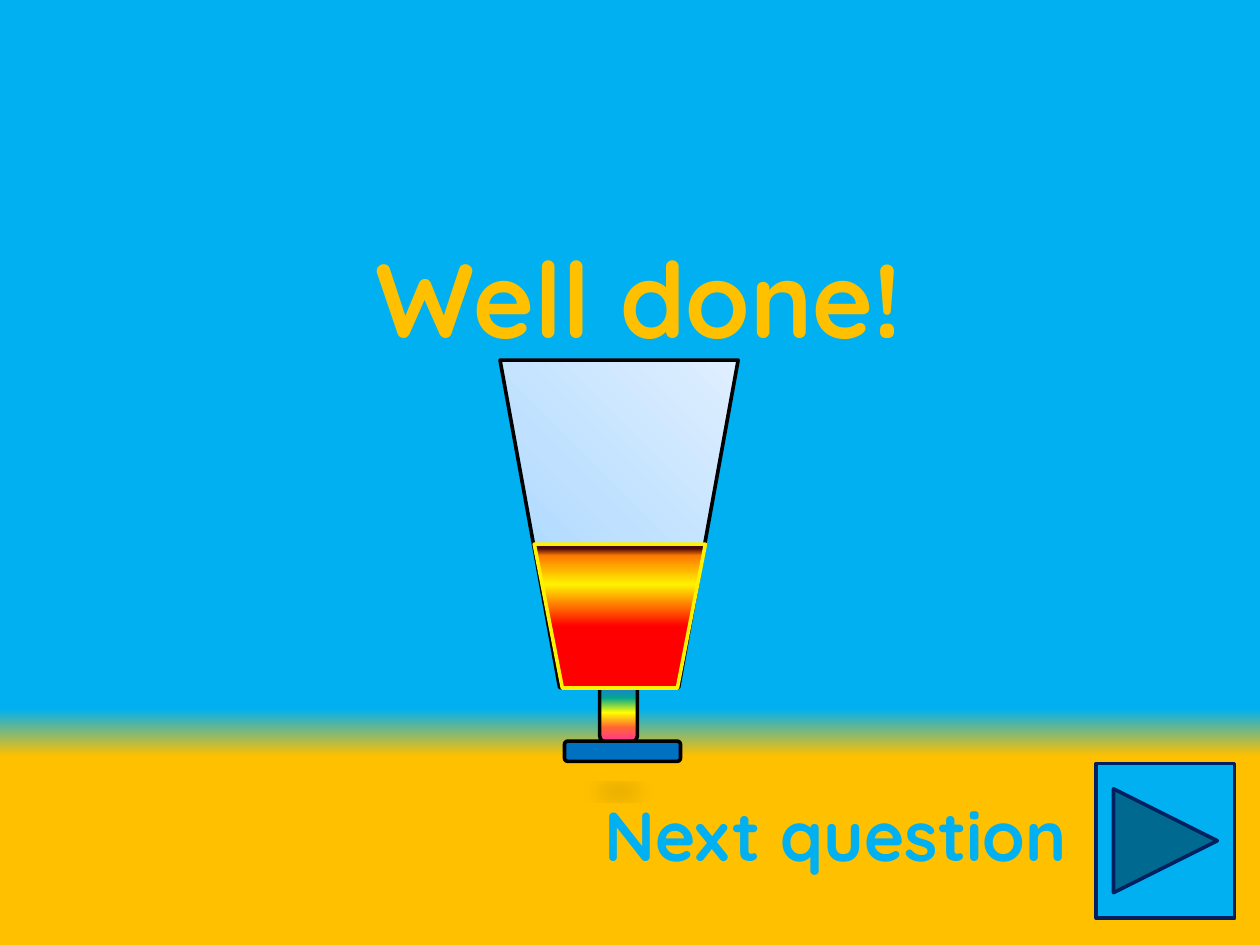
from lxml import etree
from pptx import Presentation
from pptx.dml.color import RGBColor
from pptx.enum.shapes import MSO_SHAPE
from pptx.enum.text import MSO_ANCHOR, PP_ALIGN
from pptx.oxml import parse_xml
from pptx.oxml.ns import nsdecls, qn
from pptx.util import Cm, Pt

ROUNDED = MSO_SHAPE.ROUNDED_RECTANGLE
TRAPEZOID = MSO_SHAPE.TRAPEZOID
NEXT_BUTTON = MSO_SHAPE.ACTION_BUTTON_FORWARD_OR_NEXT
MIDDLE = MSO_ANCHOR.MIDDLE
LEFT, CENTER = PP_ALIGN.LEFT, PP_ALIGN.CENTER

COLORS = {"sky": "00B0F0", "sand": "FFC000", "outline": "000000",
          "base": "0070C0", "navy": "002060", "rim": "FFF200"}
SKY_TO_SAND = [(75, COLORS["sky"]), (80, COLORS["sand"])]
RAINBOW = [(0, "FF3399"), (25, "FF6633"), (50, "FFFF00"),
           (75, "01A78F"), (100, "3366FF")]
GLASS = [(0, "96D0FF"), (50, "BFE1FF"), (100, "E0EFFF")]
JUICE = [(43, "FF0000"), (72, "FFF200"), (92, "FF7A00"), (97, "4D0808")]


def set_gradient(fill, element, stops, angle):
    """Fill with (percent, colour) stops; angle runs clockwise in degrees."""
    fill.gradient()
    fill.gradient_angle = (360 - angle) % 360
    stop_list = element.find(".//" + qn("a:gsLst"))
    for old in list(stop_list):
        stop_list.remove(old)
    for percent, color in stops:
        stop = etree.SubElement(stop_list, qn("a:gs"), pos=str(percent * 1000))
        etree.SubElement(stop, qn("a:srgbClr"), val=color)


def write(frame, text, size, color, align):
    frame.word_wrap = True
    frame.vertical_anchor = MIDDLE
    frame.text = text
    paragraph = frame.paragraphs[0]
    paragraph.alignment = align
    for name, value in {"name": "Quicksand", "size": Pt(size), "bold": True}.items():
        setattr(paragraph.runs[0].font, name, value)
    paragraph.runs[0].font.color.rgb = RGBColor.from_string(COLORS[color])


prs = Presentation()
prs.slide_width, prs.slide_height = Cm(25.4), Cm(19.05)
slide = prs.slides.add_slide(prs.slide_layouts[0])
background = slide.background.fill
background.solid()
set_gradient(background, slide.element, SKY_TO_SAND, 90)

praise, subtitle = slide.placeholders
subtitle.element.getparent().remove(subtitle.element)
praise_place = {"left": 2.08, "top": 3.94, "width": 21.59, "height": 4.09}
for side, length in praise_place.items():
    setattr(praise, side, Cm(length))
write(praise.text_frame, "Well done!", 60, "sand", CENTER)

prompt = slide.shapes.add_textbox(Cm(11.94), Cm(15.11), Cm(9.93), Cm(3.4))
write(prompt.text_frame, "Next question", 39.6, "sky", LEFT)

goblet = slide.shapes.add_group_shape().shapes
# owner, preset, place in cm, fill (colour or stops), angle, line, rotation, adjustment
parts = [
    (goblet, ROUNDED, (12.09, 13.77, 0.76, 1.19), RAINBOW, 270, "outline", 0, None),
    (goblet, TRAPEZOID, (10.08, 7.26, 4.8, 6.6), GLASS, 135, "outline", 180, None),
    (goblet, ROUNDED, (11.38, 14.94, 2.34, 0.41), "base", 0, "outline", 0, None),
    (slide.shapes, TRAPEZOID, (10.77, 10.97, 3.45, 2.9), JUICE, 90, "rim", 180, 0.195),
    (slide.shapes, NEXT_BUTTON, (22.1, 15.39, 2.79, 3.12), "sky", 0, "navy", 0, None),
]
drawn = []
for owner, preset, place, paint, angle, line, rotation, adjustment in parts:
    part = owner.add_shape(preset, *map(Cm, place))
    part.shadow.inherit = False
    part.rotation = rotation
    if adjustment is not None:
        part.adjustments[0] = adjustment
    if isinstance(paint, str):
        part.fill.solid()
        part.fill.fore_color.rgb = RGBColor.from_string(COLORS[paint])
    else:
        set_gradient(part.fill, part.element, paint, angle)
    part.line.color.rgb = RGBColor.from_string(COLORS[line])
    part.line.width = Pt(2.08)
    drawn.append(part)

stem = drawn[0]
stem.element.find(".//" + qn("a:effectLst")).append(parse_xml(
    f'<a:outerShdw {nsdecls("a")} blurRad="152400" dist="317500" dir="5400000" '
    'sx="90000" sy="-19000" rotWithShape="0">'
    '<a:srgbClr val="000000"><a:alpha val="15000"/></a:srgbClr></a:outerShdw>'))

prs.save("out.pptx")
